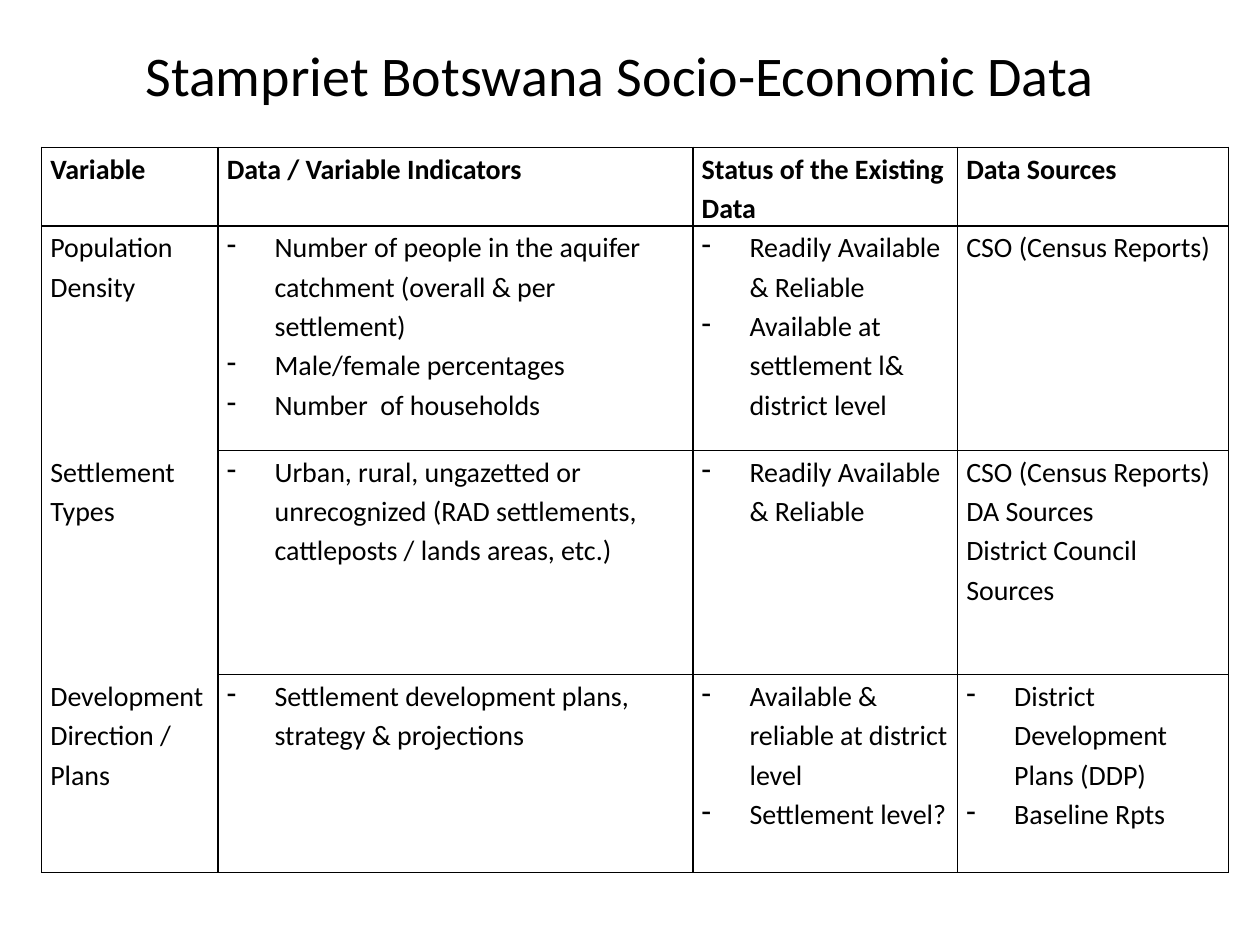
import pptx
import pptx.util
import pptx.dml.color
import pptx.enum.text
import pptx.oxml.ns
import lxml.etree
from dataclasses import dataclass

Inches = pptx.util.Inches
Pt = pptx.util.Pt
qn = pptx.oxml.ns.qn


@dataclass(frozen=True)
class Theme:
    ink: str = "000000"
    font: str = "Calibri"
    title_size: int = 32
    table_size: int = 16
    line_spacing: float = 1.15
    border: float = 1


theme = Theme()


def add_text(para, text, size, bold=False):
    span = para.add_run()
    span.text = text
    span.font.name = theme.font
    span.font.size = Pt(size)
    span.font.bold = bold
    span.font.color.rgb = pptx.dml.color.RGBColor.from_string(theme.ink)


def add_border(cell, side, visible):
    properties = cell._tc.get_or_add_tcPr()
    line = lxml.etree.SubElement(properties, qn(f"a:ln{side}"), w=str(Pt(theme.border)))
    if visible:
        fill = lxml.etree.SubElement(line, qn("a:solidFill"))
        lxml.etree.SubElement(fill, qn("a:srgbClr"), val=theme.ink)
    else:
        lxml.etree.SubElement(line, qn("a:noFill"))


deck = pptx.Presentation()
deck.slide_width = Inches(10)
deck.slide_height = Inches(7.5)
page = deck.slides.add_slide(deck.slide_layouts[5])

# Title
title = page.shapes.title
title.left, title.top = Inches(0.67), Inches(0.17)
title.width, title.height = Inches(8.5), Inches(0.83)
title.text_frame.vertical_anchor = pptx.enum.text.MSO_ANCHOR.MIDDLE
para = title.text_frame.paragraphs[0]
para.alignment = pptx.enum.text.PP_ALIGN.CENTER
add_text(para, "Stampriet Botswana Socio-Economic Data", theme.title_size)

# Table content: one list of paragraphs per cell, "- " marks a dash bullet
rows = [
    [["Variable"], ["Data / Variable Indicators"],
     ["Status of the Existing Data"], ["Data Sources"]],
    [["Population Density"],
     ["- Number of people in the aquifer catchment (overall & per settlement)",
      "- Male/female percentages", "- Number  of households"],
     ["- Readily Available & Reliable",
      "- Available at settlement l&  district level"],
     ["CSO (Census Reports)"]],
    [["Settlement Types"],
     ["- Urban, rural, ungazetted or unrecognized "
      "(RAD settlements, cattleposts / lands areas, etc.)"],
     ["- Readily Available & Reliable"],
     ["CSO (Census Reports)", "DA Sources", "District Council Sources"]],
    [["Development Direction / Plans"],
     ["- Settlement development plans, strategy & projections"],
     ["- Available & reliable at district level", "- Settlement level?"],
     ["- District Development Plans (DDP)", "- Baseline Rpts"]],
]
column_widths = [1.4, 3.77, 2.1, 2.15]
row_heights = [0.62, 1.78, 1.78, 1.57]

# Table frame
table = page.shapes.add_table(
    len(rows), len(column_widths), Inches(0.33), Inches(1.17),
    Inches(sum(column_widths)), Inches(sum(row_heights))).table
table.first_row = False
table.horz_banding = False
for column, width in zip(table.columns, column_widths):
    column.width = Inches(width)
for row, height in zip(table.rows, row_heights):
    row.height = Inches(height)

# Cells
last_row = len(rows) - 1
for row_index, row in enumerate(rows):
    for column_index, lines in enumerate(row):
        cell = table.cell(row_index, column_index)
        cell.margin_left = cell.margin_right = Inches(0.07)
        cell.margin_top = cell.margin_bottom = 0

        # The body of the first column has no rules between its rows
        ruled = column_index > 0
        add_border(cell, "L", True)
        add_border(cell, "R", True)
        add_border(cell, "T", ruled or row_index <= 1)
        add_border(cell, "B", ruled or row_index in (0, last_row))
        cell.fill.background()

        for line_index, line in enumerate(lines):
            frame = cell.text_frame
            para = frame.add_paragraph() if line_index else frame.paragraphs[0]
            para.line_spacing = theme.line_spacing
            if line.startswith("- "):
                properties = para._p.get_or_add_pPr()
                properties.set("marL", str(Inches(0.38)))
                properties.set("indent", str(Inches(-0.38)))
                lxml.etree.SubElement(properties, qn("a:buChar"), char="-")
            add_text(para, line.removeprefix("- "), theme.table_size, row_index == 0)

deck.save("out.pptx")
